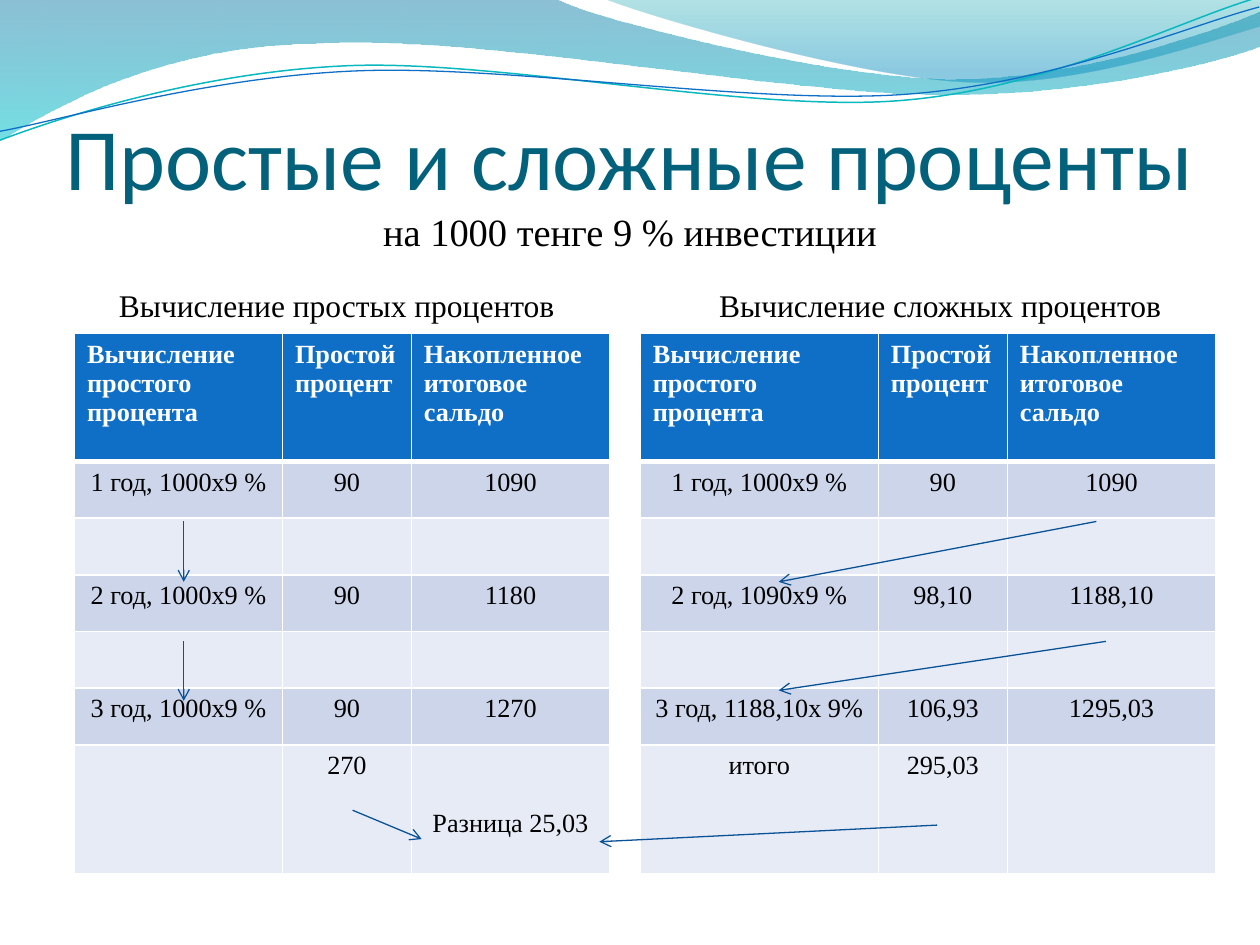
from lxml.etree import SubElement
from pptx import Presentation
from pptx.dml.color import RGBColor
from pptx.enum.shapes import MSO_CONNECTOR
from pptx.enum.text import MSO_ANCHOR, PP_ALIGN
from pptx.oxml.ns import qn
from pptx.util import Pt

COLORS = {
    "white": "FFFFFF", "black": "000000", "title": "04617B",
    "header": "0F6FC6", "band": "CCD5EA", "light": "E7EBF5", "arrow": "095295",
    "teal line": "0AB8BF", "blue line": "0F6FC6",
    "wave top": "0074A1", "wave bottom": "00C6CF",
    "crest top": "00A1A9", "crest bottom": "008BBF",
}
SERIF = "Times New Roman"


def color(name):
    return RGBColor.from_string(COLORS[name])


def add_outline(shapes, start, segments, close):
    """Draw segments of one point (straight) or three points (cubic curve)."""
    builder = shapes.build_freeform(Pt(start[0]), Pt(start[1]), scale=1.0)
    builder.add_line_segments([(Pt(x), Pt(y)) for segment in segments for x, y in segment],
                              close=close)
    shape = builder.convert_to_shape()
    shape.shadow.inherit = False
    straight_lines = iter(list(shape._element.iter(qn("a:lnTo"))))
    for segment in segments:
        lines = [next(straight_lines) for _ in segment]
        if len(lines) == 3:
            curve = SubElement(lines[0].getparent(), qn("a:cubicBezTo"))
            lines[0].addprevious(curve)
            for line in lines:
                curve.append(line[0])
                line.getparent().remove(line)
    return shape


presentation = Presentation()
presentation.slide_width, presentation.slide_height = Pt(720), Pt(540)
slide = presentation.slides.add_slide(presentation.slide_layouts[6])
shapes = slide.shapes

# Waves: start, segments, gradient stops as (position, colour, opacity in percent)
waves = [
    ((0, -1), [
        [(317, -1)],
        [(343, 12), (478, 45), (546, 45)],
        [(614, 45), (690, 19), (720, 6.5)],
        [(721, 26)],
        [(708, 32), (626, 55), (537, 54)],
        [(448, 54), (275, 20), (185, 24.5)],
        [(93, 25), (33, 60), (-1, 81)],
    ], [(0, "wave top", 45), (1, "wave bottom", 55)]),
    ((345, -1), [
        [(366, 8), (491, 45), (554, 47)],
        [(617, 50), (692, 23), (720, 15)],
        [(720, 0)],
    ], [(0, "crest top", 30), (0.8, "crest bottom", 45)]),
]
for start, segments, stops in waves:
    wave = add_outline(shapes, start, segments, close=True)
    wave.line.fill.background()
    wave.fill.gradient()
    wave.fill.gradient_angle = 270
    for stop, (position, name, _) in zip(wave.fill.gradient_stops, stops):
        stop.position = position
        stop.color.rgb = color(name)
    gradient = wave._element.spPr.find(qn("a:gradFill"))
    for element, (_, _, opacity) in zip(gradient.iter(qn("a:srgbClr")), stops):
        SubElement(element, qn("a:alpha")).set("val", str(opacity * 1000))

wave_lines = [
    ((-1.3, 63.1), [
        [(34, 51.7), (114, 29.5), (199.5, 30)],
        [(284.5, 30.5), (426, 67.2), (512, 64.8)],
        [(599.5, 62.4), (676, 25.9), (721, 15.4)],
    ], "teal line", 0.85),
    ((-1.5, 58.1), [
        [(33, 53.7), (118, 32.6), (204, 33.2)],
        [(290, 33.7), (429, 63.3), (515.5, 61.4)],
        [(602, 59.4), (679, 30), (721, 21)],
    ], "blue line", 0.75),
]
for start, segments, name, width in wave_lines:
    curve = add_outline(shapes, start, segments, close=False)
    curve.rotation = 357.3
    curve.fill.background()
    curve.line.color.rgb = color(name)
    curve.line.width = Pt(width)

# Title with its second line, then both table headings, set apart by a tab
title_frame = shapes.add_textbox(Pt(36), Pt(55.4), Pt(648), Pt(90)).text_frame
title_frame.vertical_anchor = MSO_ANCHOR.BOTTOM
title_frame.margin_left = title_frame.margin_right = title_frame.margin_bottom = 0
title = title_frame.paragraphs[0]
title.text = "Простые и сложные проценты\vна 1000 тенге 9 % инвестиции"
title.alignment = PP_ALIGN.CENTER

heading_frame = shapes.add_textbox(Pt(42.6), Pt(159.8), Pt(652.3), Pt(345.6)).text_frame
heading_frame.margin_left = Pt(25.4)
headings = heading_frame.paragraphs[0]
headings.text = "Вычисление простых процентов\tВычисление сложных процентов"
tab_stops = SubElement(headings._p.get_or_add_pPr(), qn("a:tabLst"))
SubElement(tab_stops, qn("a:tab"), pos=str(Pt(343)), algn="l")

run_formats = [(50, "Calibri", "title"), (22, SERIF, "black"), (18, SERIF, "black")]
for frame in (title_frame, heading_frame):
    frame.word_wrap = True
for run, (size, font_name, name) in zip(title.runs + headings.runs, run_formats):
    run.font.size, run.font.name, run.font.color.rgb = Pt(size), font_name, color(name)

# Table: simple interest on the left, compound on the right, an open gap between
headers = ["Вычисление простого процента", "Простой процент", "Накопленное итоговое сальдо"]
empty = [""] * 7
rows = [
    headers + [""] + headers,
    ["1 год, 1000х9 %", "90", "1090", "", "1 год, 1000х9 %", "90", "1090"],
    empty,
    ["2 год, 1000х9 %", "90", "1180", "", "2 год, 1090х9 %", "98,10", "1188,10"],
    empty,
    ["3 год, 1000х9 %", "90", "1270", "", "3 год, 1188,10х 9%", "106,93", "1295,03"],
    ["", "270", "Разница 25,03", "", "итого", "295,03", ""],
]
column_widths = [118.8, 73.7, 113.3, 17.5, 136.1, 73.7, 119.1]
row_heights = [73] + [32.4] * 5 + [73.4]
gap_column = 3
table = shapes.add_table(len(rows), len(column_widths), Pt(42.6), Pt(190.7),
                         Pt(sum(column_widths)), Pt(sum(row_heights))).table
table.first_row = table.horz_banding = False
for column, width in zip(table.columns, column_widths):
    column.width = Pt(width)
for row, height in zip(table.rows, row_heights):
    row.height = Pt(height)
table.cell(0, gap_column).merge(table.cell(len(rows) - 1, gap_column))

for row_index, values in enumerate(rows):
    is_header = row_index == 0
    fill_name = "header" if is_header else "band" if row_index % 2 else "light"
    for column_index, value in enumerate(values):
        cell = table.cell(row_index, column_index)
        properties = cell._tc.get_or_add_tcPr()
        for side in ("L", "R", "T", "B"):
            thick = (is_header and side == "B") or (row_index == 1 and side == "T")
            border = SubElement(properties, qn(f"a:ln{side}"), w=str(Pt(3 if thick else 1)))
            solid = SubElement(border, qn("a:solidFill"))
            SubElement(solid, qn("a:srgbClr")).set("val", COLORS["white"])
        if column_index == gap_column:
            cell.fill.background()
            continue
        cell.fill.solid()
        cell.fill.fore_color.rgb = color(fill_name)
        cell.text_frame.text = value
        paragraph = cell.text_frame.paragraphs[0]
        paragraph.alignment = PP_ALIGN.LEFT if is_header else PP_ALIGN.CENTER
        for run in paragraph.runs:
            font = run.font
            font.size, font.name, font.bold = Pt(15), SERIF, is_header
            font.color.rgb = color("white" if is_header else "black")
table.cell(6, 2).margin_top = Pt(37)

arrows = [
    (105, 298, 105, 332.5), (105, 366.5, 105, 400.5),
    (626.5, 298, 445, 332.5), (632, 366.5, 445, 394.5),
    (201.5, 463, 241, 479.5), (535.5, 471.5, 342.5, 481),
]
for ends in arrows:
    arrow = shapes.add_connector(MSO_CONNECTOR.STRAIGHT, *map(Pt, ends))
    arrow.line.color.rgb = color("arrow")
    arrow.line.width = Pt(0.75)
    SubElement(arrow.line._get_or_add_ln(), qn("a:tailEnd")).set("type", "arrow")
    SubElement(arrow._element.spPr, qn("a:effectLst"))

presentation.save("out.pptx")
